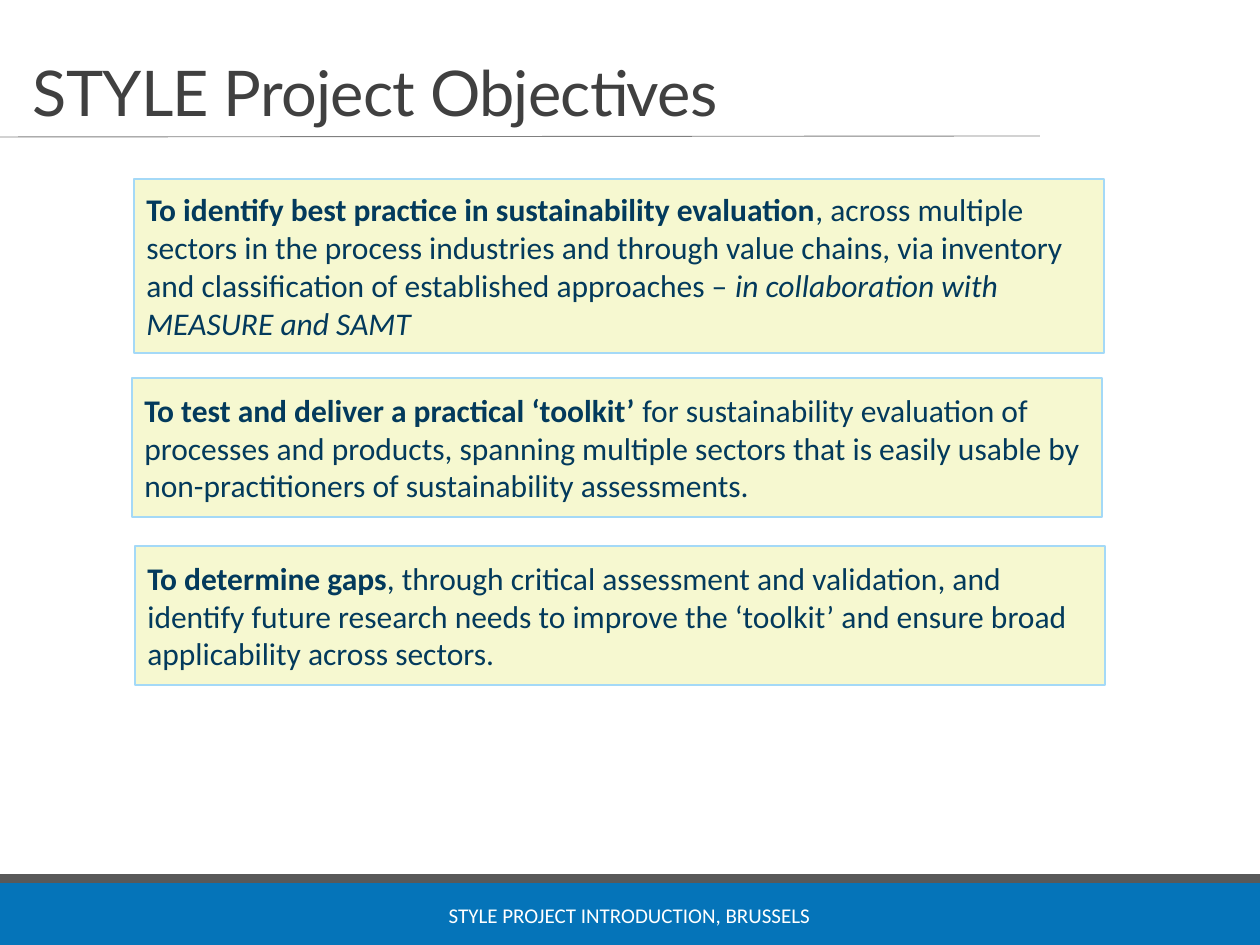
"""Builds the STYLE project objectives slide."""
from lxml.etree import SubElement
from pptx import Presentation
from pptx.dml.color import RGBColor
from pptx.enum.shapes import MSO_CONNECTOR, MSO_SHAPE
from pptx.enum.text import MSO_ANCHOR, MSO_AUTO_SIZE, PP_ALIGN
from pptx.oxml.ns import qn
from pptx.util import Pt

TITLE = "STYLE Project Objectives"
FOOTER = "STYLE PROJECT INTRODUCTION, BRUSSELS"
OBJECTIVES = [
    ((134, 179, 970, 174), [
        ("To identify best practice in sustainability evaluation", "bold"),
        (", across multiple sectors in the process industries and through value chains, "
         "via inventory and classification of established approaches – ", ""),
        ("in collaboration with MEASURE and SAMT", "italic")]),
    ((132, 378, 970, 139), [
        ("To test and deliver a practical ‘toolkit’ ", "bold"),
        ("for sustainability evaluation of processes and products, spanning multiple sectors "
         "that is easily usable by non-practitioners of sustainability assessments.", "")]),
    ((135, 546, 970, 139), [
        ("To determine gaps", "bold"),
        (", through critical assessment and validation, and identify future research needs "
         "to improve the ‘toolkit’ and ensure broad applicability across sectors.", "")]),
]
BANDS = [((0, 879, 1260, 71), "blue"), ((0, 874, 1260, 9), "grey")]
COLORS = {"blue": "0574B9", "grey": "595959", "rule": "808080", "title": "404040",
          "panel": "F6F8D0", "border": "A4D9F7", "text": "033A5C", "white": "FFFFFF"}
EMU_PER_PX = 914400 / 126


def px(*lengths):
    return [round(length * EMU_PER_PX) for length in lengths]


def color(name):
    return RGBColor.from_string(COLORS[name])


def write(frame, runs, size, ink, font="Calibri", align=PP_ALIGN.LEFT,
          anchor=MSO_ANCHOR.MIDDLE, line_spacing=None, tracking=None):
    frame.word_wrap = True
    frame.auto_size = MSO_AUTO_SIZE.NONE
    frame.vertical_anchor = anchor
    paragraph = frame.paragraphs[0]
    paragraph.alignment = align
    paragraph.line_spacing = line_spacing
    for words, style in runs:
        run = paragraph.add_run()
        run.text = words
        run.font.name, run.font.size = font, Pt(size)
        run.font.bold, run.font.italic = style == "bold", style == "italic"
        run.font.color.rgb = color(ink)
        if tracking:
            run.font._element.set("spc", str(tracking))


def add_panel(slide, box, fill, border=None):
    panel = slide.shapes.add_shape(MSO_SHAPE.RECTANGLE, *px(*box))
    panel.shadow.inherit = False
    panel.fill.solid()
    panel.fill.fore_color.rgb = color(fill)
    if border:
        panel.line.color.rgb = color(border)
        panel.line.width = Pt(1)
    else:
        panel.line.fill.background()
    return panel


def main():
    deck = Presentation()
    deck.slide_width, deck.slide_height = px(1260, 945)
    slide = deck.slides.add_slide(deck.slide_layouts[5])

    for box, fill in BANDS:
        add_panel(slide, box, fill)

    rule = slide.shapes.add_connector(MSO_CONNECTOR.STRAIGHT, *px(0, 137, 1040, 136))
    rule.line.color.rgb = color("rule")
    rule.line.width = Pt(0.5)
    SubElement(rule._element.spPr, qn("a:effectLst"))

    title = slide.shapes.title
    title.left, title.top, title.width, title.height = px(20, 0, 1040, 136)
    write(title.text_frame, [(TITLE, "")], 36, "title", font="Lato",
          anchor=MSO_ANCHOR.BOTTOM, line_spacing=0.85, tracking=-40)

    for box, runs in OBJECTIVES:
        objective = add_panel(slide, box, "panel", "border")
        write(objective.text_frame, runs, 18, "text")

    footer = slide.shapes.add_textbox(*px(380, 890, 499, 50))
    write(footer.text_frame, [(FOOTER, "")], 12, "white", align=PP_ALIGN.CENTER)

    deck.save("out.pptx")


if __name__ == "__main__":
    main()
